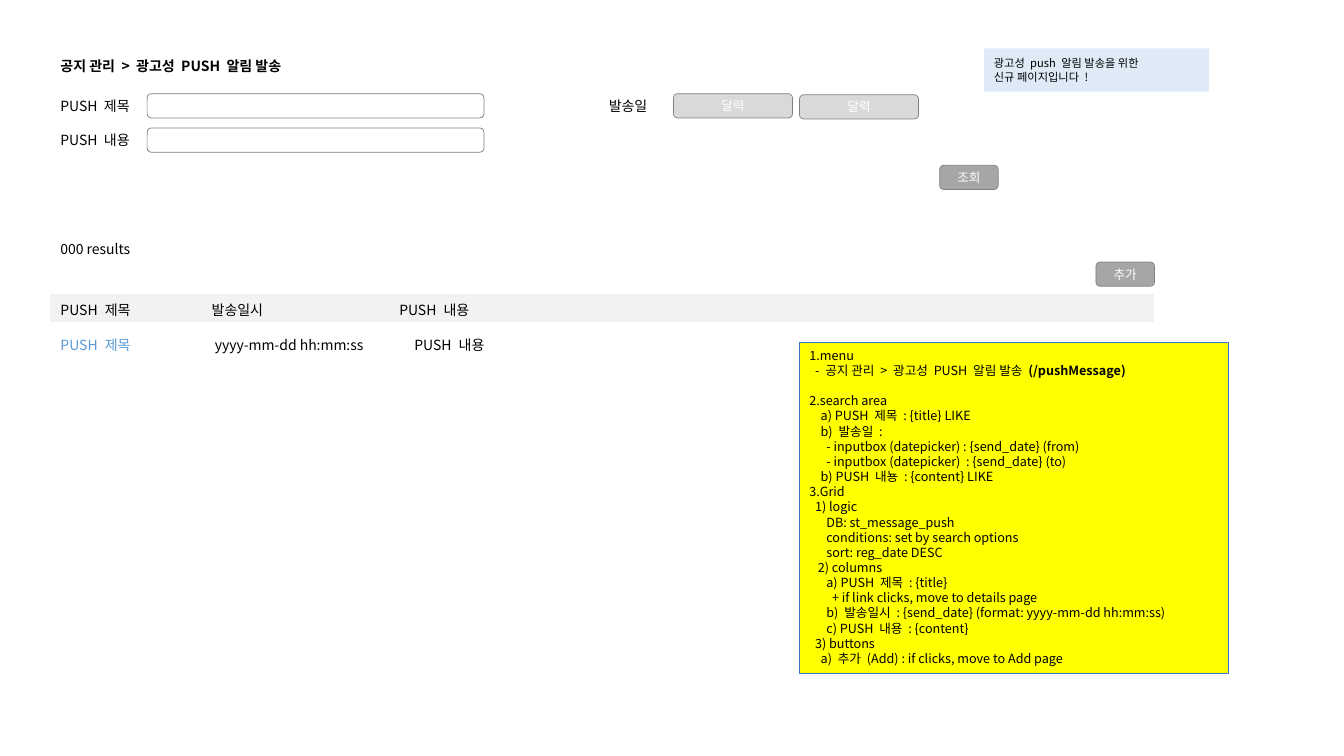
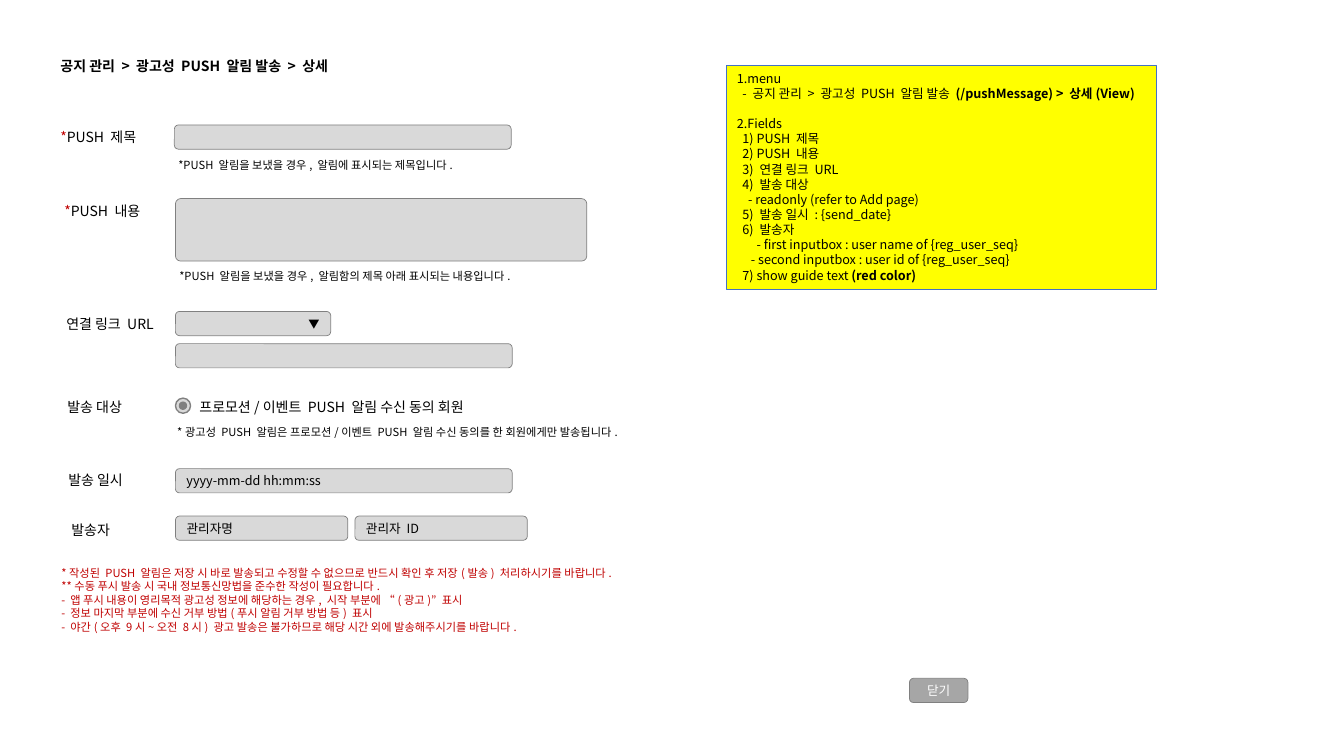
from pptx import Presentation
from pptx import util as u
from pptx.dml.color import RGBColor
from pptx.enum import shapes, text
from pptx.oxml.ns import qn

FONT = "Noto Sans CJK KR"
BLACK, WHITE, RED, LINK = "000000", "FFFFFF", "C00000", "5B9BD5"
BORDER, FIELD, BUTTON, BAND = "808080", "D9D9D9", "A6A6A6", "F2F2F2"
NOTE, NOTE_LINE, HINT = "FFFF00", "4472C4", "DEEBF7"
LEFT = 0.5
FIELD_X = 1.74
FIELD_H = 0.24
FIELD_W = 3.34
INDENT = 0.028  # one step of indent in a note
NOTE_GAP = 10.8  # one note line, in points

RECT = shapes.MSO_SHAPE.RECTANGLE
ROUND = shapes.MSO_SHAPE.ROUNDED_RECTANGLE
OVAL = shapes.MSO_SHAPE.OVAL
CENTER, RIGHT = text.PP_ALIGN.CENTER, text.PP_ALIGN.RIGHT
TOP, MIDDLE = text.MSO_ANCHOR.TOP, text.MSO_ANCHOR.MIDDLE

SEARCH_TITLE = "공지 관리 > 광고성 PUSH 알림 발송"
SEARCH_LABELS = [(LEFT, 0.92, "PUSH 제목"), (LEFT, 1.26, "PUSH 내용"),
                 (5.94, 0.92, "발송일"), (LEFT, 2.34, "000 results")]
DATE_FIELDS = [(6.68, 0.93), (7.93, 0.94)]
SEARCH_BUTTONS = [(9.32, 1.64, "조회"), (10.87, 2.6, "추가")]
HINT_LINES = ["광고성 push 알림 발송을 위한", "신규 페이지입니다 !"]
GRID_COLUMNS = [1.5, 1.86, 7.59]
# height, top margin, fill, cells as (left margin, text, colour)
GRID_ROWS = [
    (0.27, 0.05, BAND, [(0.1, "PUSH 제목", BLACK), (0.1, "발송일시", BLACK),
                        (0.1, "PUSH 내용", BLACK)]),
    (0.4, 0.13, None, [(0.1, "PUSH 제목", LINK), (0.13, "yyyy-mm-dd hh:mm:ss", BLACK),
                       (0.25, "PUSH 내용", BLACK)]),
]
# sections of lines: (indent steps, text, optional bold ending)
SEARCH_NOTE = [
    [(0, "1.menu"), (2, "- 공지 관리 > 광고성 PUSH 알림 발송 ", "(/pushMessage)")],
    [(0, "2.search area"),
     (4, "a) PUSH 제목 : {title} LIKE"),
     (4, "b) 발송일 : "),
     (6, "- inputbox (datepicker) : {send_date} (from)"),
     (6, "- inputbox (datepicker)  : {send_date} (to)"),
     (4, "b) PUSH 내뇽 : {content} LIKE"),
     (0, "3.Grid"),
     (2, "1) logic"),
     (6, "DB: st_message_push"),
     (6, "conditions: set by search options"),
     (6, "sort: reg_date DESC"),
     (3, "2) columns"),
     (6, "a) PUSH 제목 : {title}"),
     (8, "+ if link clicks, move to details page"),
     (6, "b) 발송일시 : {send_date} (format: yyyy-mm-dd hh:mm:ss)"),
     (6, "c) PUSH 내용 : {content}"),
     (2, "3) buttons"),
     (4, "a) 추가 (Add) : if clicks, move to Add page")],
]

DETAIL_TITLE = "공지 관리 > 광고성 PUSH 알림 발송 > 상세"
# left, top, text, required
DETAIL_LABELS = [(0.5, 1.23, "PUSH 제목", True), (0.54, 1.96, "PUSH 내용", True),
                 (0.56, 3.08, "연결 링크 URL", False), (0.57, 3.9, "발송 대상", False),
                 (0.58, 4.63, "발송 일시", False), (0.61, 5.12, "발송자", False)]
# left, top, width, height, text, format
DETAIL_FIELDS = [
    (1.73, 1.24, FIELD_W, FIELD_H, "", {}),
    (FIELD_X, 1.97, 4.08, 0.62, "", {}),
    (FIELD_X, 3.09, 1.54, FIELD_H, "▼", {"size": 8, "align": RIGHT}),
    (FIELD_X, 3.41, FIELD_W, FIELD_H, "", {}),
    (FIELD_X, 4.65, FIELD_W, FIELD_H, "yyyy-mm-dd hh:mm:ss", {}),
    (FIELD_X, 5.12, 1.71, FIELD_H, "관리자명", {}),
    (3.52, 5.12, 1.71, FIELD_H, "관리자 ID", {}),
]
FIELD_HINTS = [
    (1.67, 1.52, "*PUSH 알림을 보냈을 경우, 알림에 표시되는 제목입니다."),
    (1.68, 2.62, "*PUSH 알림을 보냈을 경우, 알림함의 제목 아래 표시되는 내용입니다."),
    (1.66, 4.17, "*광고성 PUSH 알림은 프로모션/이벤트 PUSH 알림 수신 동의를 한 회원에게만 발송됩니다."),
]
TARGET = "프로모션/이벤트 PUSH 알림 수신 동의 회원"
GUIDE = [
    "*작성된 PUSH 알림은 저장 시 바로 발송되고 수정할 수 없으므로 반드시 확인 후 저장(발송) 처리하시기를 바랍니다.",
    "**수동 푸시 발송 시 국내 정보통신망법을 준수한 작성이 필요합니다.",
    "- 앱 푸시 내용이 영리목적 광고성 정보에 해당하는 경우, 시작 부분에 “(광고)” 표시",
    "- 정보 마지막 부분에 수신 거부 방법(푸시 알림 거부 방법 등) 표시",
    "- 야간(오후 9시~오전 8시) 광고 발송은 불가하므로 해당 시간 외에 발송해주시기를 바랍니다.",
]
DETAIL_NOTE = [
    [(0, "1.menu"),
     (2, "- 공지 관리 > 광고성 PUSH 알림 발송 ", "(/pushMessage) > 상세(View)")],
    [(0, "2.Fields"),
     (2, "1) PUSH 제목"),
     (2, "2) PUSH 내용"),
     (2, "3) 연결 링크 URL"),
     (2, "4) 발송 대상"),
     (4, "- readonly (refer to Add page)"),
     (2, "5) 발송 일시 : {send_date}"),
     (2, "6) 발송자 "),
     (7, "- first inputbox : user name of {reg_user_seq}"),
     (5, "- second inputbox : user id of {reg_user_seq}"),
     (2, "7) show guide text ", "(red color)")],
]


def rgb(code):
    return RGBColor.from_string(code)


def add_span(para, words, size=10, color=BLACK, bold=False):
    span = para.add_run()
    span.text = words
    font = span.font
    font.name, font.size, font.bold = FONT, u.Pt(size), bold
    font.color.rgb = rgb(color)
    east_asian = span._r.get_or_add_rPr().makeelement(qn("a:ea"), {"typeface": FONT})
    font._element.find(qn("a:latin")).addnext(east_asian)


def write(frame, lines, align=None, anchor=TOP, wrap=True, **style):
    """Put each line in its own paragraph of the text frame."""
    frame.word_wrap = wrap
    frame.vertical_anchor = anchor
    for number, line in enumerate(lines):
        para = frame.add_paragraph() if number else frame.paragraphs[0]
        para.alignment = align or text.PP_ALIGN.LEFT
        add_span(para, line, **style)


def add_text(page, left, top, lines, width=1.2, height=0.27, **style):
    box = page.shapes.add_textbox(*map(u.Inches, (left, top, width, height)))
    write(box.text_frame, lines, wrap=False, **style)
    return box


def add_box(page, kind, left, top, width, height, fill, line=None, weight=0.5):
    box = page.shapes.add_shape(kind, *map(u.Inches, (left, top, width, height)))
    box.shadow.inherit = False
    box.fill.solid()
    box.fill.fore_color.rgb = rgb(fill)
    if line:
        box.line.color.rgb = rgb(line)
        box.line.width = u.Pt(weight)
    else:
        box.line.fill.background()
    return box


def add_control(page, left, top, width, height=FIELD_H, fill=FIELD, label="", **style):
    """Add a rounded input field or button."""
    box = add_box(page, ROUND, left, top, width, height, fill, BORDER)
    box.adjustments[0] = 0.083 if height > FIELD_H else 0.167
    if label:
        write(box.text_frame, [label], anchor=MIDDLE, **{"size": 9, **style})


def add_button(page, left, top, label):
    add_control(page, left, top, 0.58, fill=BUTTON, label=label, color=WHITE, align=CENTER)


def add_note(page, left, top, height, sections):
    box = add_box(page, RECT, left, top, 4.26, height, NOTE, NOTE_LINE, 0.75)
    frame = box.text_frame
    frame.word_wrap = True
    frame.vertical_anchor = TOP
    para = None
    for section in sections:
        for number, (steps, words, *ending) in enumerate(section):
            gap = para is not None and number == 0
            para = frame.paragraphs[0] if para is None else frame.add_paragraph()
            para.alignment = text.PP_ALIGN.LEFT
            para.space_before = u.Pt(NOTE_GAP if gap else 0)
            para._p.get_or_add_pPr().set("marL", str(u.Inches(steps * INDENT)))
            add_span(para, words, size=9)
            for bold_words in ending:
                add_span(para, bold_words, size=9, bold=True)


def add_grid(page, left, top):
    frame = page.shapes.add_table(
        len(GRID_ROWS), len(GRID_COLUMNS), u.Inches(left), u.Inches(top),
        u.Inches(sum(GRID_COLUMNS)), u.Inches(sum(row[0] for row in GRID_ROWS)))
    table = frame.table
    table.first_row = table.horz_banding = False
    frame._element.find(".//" + qn("a:tableStyleId")).text = (
        "{2D5ABB26-0587-4C30-8999-92F81FD0307C}")  # no style, no grid
    for column, width in zip(table.columns, GRID_COLUMNS):
        column.width = u.Inches(width)
    for row, (height, margin_top, fill, cells) in zip(table.rows, GRID_ROWS):
        row.height = u.Inches(height)
        for cell, (margin_left, words, color) in zip(row.cells, cells):
            cell.margin_left, cell.margin_top = u.Inches(margin_left), u.Inches(margin_top)
            cell.margin_right = cell.margin_bottom = u.Inches(0.05)
            if fill:
                cell.fill.solid()
                cell.fill.fore_color.rgb = rgb(fill)
            else:
                cell.fill.background()
            add_span(cell.text_frame.paragraphs[0], words, color=color)


def add_page(deck, title):
    page = deck.slides.add_slide(deck.slide_layouts[5])
    box = page.shapes.title
    box.left, box.top, box.width, box.height = map(u.Inches, (LEFT, 0.52, 8.65, 0.28))
    box.text_frame.auto_size = text.MSO_AUTO_SIZE.NONE
    write(box.text_frame, [title], bold=True)
    return page


def build_search(deck):
    page = add_page(deck, SEARCH_TITLE)
    for left, top, label in SEARCH_LABELS:
        add_text(page, left, top, [label])
    for top in (0.93, 1.27):
        add_control(page, 1.46, top, FIELD_W, fill=WHITE)
    for left, top in DATE_FIELDS:
        add_control(page, left, top, 1.18, label="달력", color=WHITE, align=CENTER)
    add_grid(page, LEFT, 2.92)
    for button in SEARCH_BUTTONS:
        add_button(page, *button)
    hint = add_box(page, RECT, 9.76, 0.48, 2.23, 0.43, HINT)
    write(hint.text_frame, HINT_LINES, anchor=MIDDLE, size=8)
    add_note(page, 7.93, 3.4, 3.28, SEARCH_NOTE)


def build_detail(deck):
    page = add_page(deck, DETAIL_TITLE)
    for left, top, label, required in DETAIL_LABELS:
        if required:
            box = add_text(page, left, top, ["*"], color=RED)
            add_span(box.text_frame.paragraphs[0], label)
        else:
            add_text(page, left, top, [label])
    for left, top, width, height, label, style in DETAIL_FIELDS:
        add_control(page, left, top, width, height, label=label, **style)
    for left, top, words in FIELD_HINTS:
        add_text(page, left, top, [words], width=4.8, height=0.24, size=8)
    for inset, fill in ((0, FIELD), (0.04, BORDER)):
        size = 0.15 - 2 * inset
        add_box(page, OVAL, FIELD_X + inset, 3.95 + inset, size, size, fill, BORDER, 1)
    add_text(page, 1.88, 3.9, [TARGET], width=3)
    add_text(page, 0.51, 5.57, GUIDE, width=6.24, height=0.77, size=8, color=RED)
    add_button(page, 9.02, 6.73, "닫기")
    add_note(page, 7.21, 0.65, 2.22, DETAIL_NOTE)


def main():
    deck = Presentation()
    deck.slide_width, deck.slide_height = u.Inches(13.33), u.Inches(7.5)
    build_search(deck)
    build_detail(deck)
    deck.save("out.pptx")


if __name__ == "__main__":
    main()
